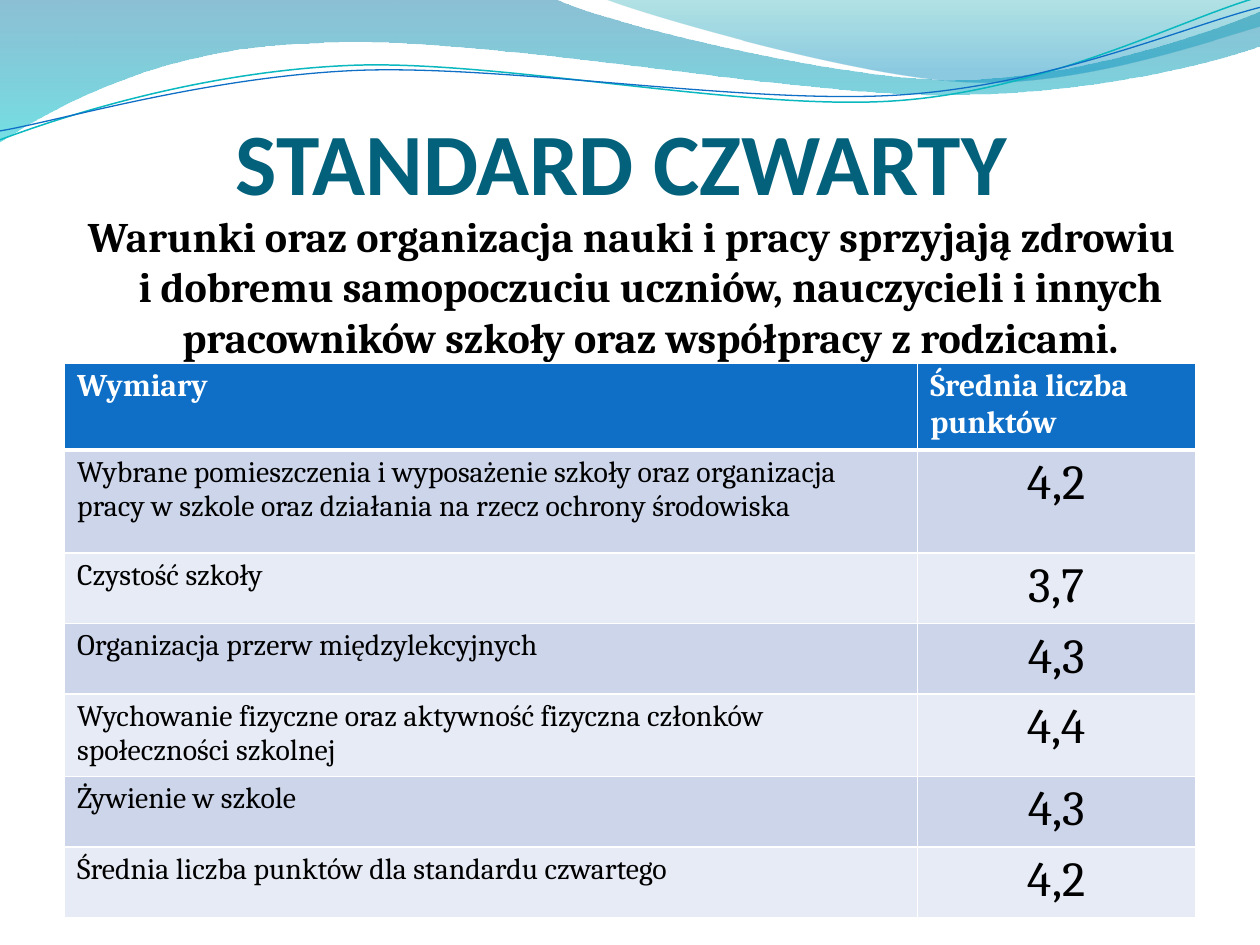
from dataclasses import dataclass

from lxml.etree import SubElement
from pptx import Presentation
from pptx.dml.color import RGBColor
from pptx.enum.text import MSO_ANCHOR as Anchor, MSO_AUTO_SIZE as AutoSize, PP_ALIGN as Align
from pptx.oxml.ns import qn
from pptx.util import Cm, Pt


@dataclass(frozen=True)
class Theme:
    heading_font: str = "Calibri"
    text_font: str = "Cambria"
    heading: str = "04617B"
    text: str = "000000"
    light: str = "FFFFFF"
    accent: str = "0F6FC6"
    teal: str = "0AB8BF"
    bands: tuple = ("CCD5EA", "E7EBF5")
    heading_size: float = 50
    lead_size: float = 24
    header_size: float = 18
    label_size: float = 17
    score_size: float = 28


THEME = Theme()

TITLE = "STANDARD CZWARTY"
LEAD = ("Warunki oraz organizacja nauki i pracy sprzyjają zdrowiu i dobremu samopoczuciu "
        "uczniów, nauczycieli i innych pracowników szkoły oraz współpracy z rodzicami.")
ROWS = [
    ("Wymiary", "Średnia liczba punktów"),
    ("Wybrane pomieszczenia i wyposażenie szkoły oraz organizacja pracy w szkole "
     "oraz działania na rzecz ochrony środowiska", "4,2"),
    ("Czystość szkoły", "3,7"),
    ("Organizacja przerw międzylekcyjnych", "4,3"),
    ("Wychowanie fizyczne oraz aktywność fizyczna członków społeczności szkolnej", "4,4"),
    ("Żywienie w szkole", "4,3"),
    ("Średnia liczba punktów dla standardu czwartego", "4,2"),
]
COLUMN_WIDTHS = (17.2, 5.6)
ROW_HEIGHTS = (1.75, 2.08, 1.42, 1.42, 1.63, 1.42, 1.42)
CELL_MARGIN = 0.11

# Outlines in cm: a pair is a straight step, six numbers are a Bézier curve.
# Each wave has its gradient stops: position, colour, opacity in percent.
WAVES = [
    ([(0, 0), (11.18, -0.03), (12.09, 0.43, 16.87, 1.6, 19.25, 1.6),
      (21.67, 1.6, 24.33, 0.66, 25.4, 0.23), (25.43, 0.91),
      (24.97, 1.12, 22.1, 1.93, 18.95, 1.91), (15.8, 1.91, 9.7, 0.71, 6.53, 0.86),
      (3.28, 0.91, 1.17, 2.11, -0.03, 2.87), (0, 0)],
     [(0, "0074A1", 45), (1, "00C6CF", 55)]),
    ([(12.17, -0.03), (12.93, 0.28, 17.32, 1.57, 19.53, 1.65),
      (21.74, 1.75, 24.41, 0.81, 25.4, 0.53), (25.4, 0), (12.17, -0.03)],
     [(0, "00A1A9", 30), (0.8, "008BBF", 45)]),
]
STRANDS = [
    ([(0, 2.82), (1.22, 2.36, 4.01, 1.45, 7.04, 1.32),
      (10.03, 1.19, 15.06, 2.26, 18.11, 2.03), (21.16, 1.8, 23.83, 0.38, 25.35, -0.05)],
     THEME.teal, 0.85),
    ([(0, 2.64), (1.19, 2.44, 4.17, 1.55, 7.19, 1.42),
      (10.24, 1.3, 15.16, 2.13, 18.21, 1.91), (21.23, 1.7, 23.9, 0.53, 25.4, 0.15)],
     THEME.accent, 0.75),
]


def rgb(value):
    return RGBColor.from_string(value)


def add_span(para, text, font, size, color, bold=False):
    span = para.add_run()
    span.text = text
    span.font.name, span.font.size, span.font.bold = font, Pt(size), bold
    span.font.color.rgb = rgb(color)


def add_outline(page, box, outline, close):
    left, top = box[:2]
    points = [(Cm(left + part[i]), Cm(top + part[i + 1]))
              for part in outline for i in range(0, len(part), 2)]
    builder = page.shapes.build_freeform(*points[0])
    builder.add_line_segments(points[1:], close=close)
    shape = builder.convert_to_shape()
    shape.shadow.inherit = False
    # Join each three steps of a curve into one Bézier segment
    steps = iter(list(shape.element.iter(qn("a:lnTo"))))
    for part in outline[1:]:
        group = [next(steps) for _ in range(len(part) // 2)]
        if len(group) == 3:
            group[0].tag = qn("a:cubicBezTo")
            for step in group[1:]:
                group[0].append(step[0])
                step.getparent().remove(step)
    return shape


def add_waves(page, box):
    # Translucent bands
    for outline, stops in WAVES:
        wave = add_outline(page, box, outline, close=True)
        wave.line.fill.background()
        wave.fill.gradient()
        wave.fill.gradient_angle = 270
        elements = wave.element.iter(qn("a:gs"))
        for stop, element, (position, color, opacity) in zip(
                wave.fill.gradient_stops, elements, stops):
            stop.position = position
            stop.color.rgb = rgb(color)
            SubElement(element[0], qn("a:alpha"), val=str(opacity * 1000))
    # Thin strands
    for outline, color, width in STRANDS:
        strand = add_outline(page, box, outline, close=False)
        strand.fill.background()
        strand.line.color.rgb = rgb(color)
        strand.line.width = Pt(width)


def add_title(page, box):
    title = page.shapes.title
    title.left, title.top, title.width, title.height = map(Cm, box)
    frame = title.text_frame
    frame.auto_size, frame.vertical_anchor = AutoSize.NONE, Anchor.BOTTOM
    frame.margin_left = frame.margin_right = frame.margin_bottom = 0
    para = frame.paragraphs[0]
    para.alignment = Align.CENTER
    add_span(para, TITLE, THEME.heading_font, THEME.heading_size, THEME.heading, True)


def add_lead(page, box):
    frame = page.shapes.add_textbox(*map(Cm, box)).text_frame
    frame.word_wrap = True
    para = frame.paragraphs[0]
    para.alignment = Align.CENTER
    hanging = Cm(0.76)
    properties = para._p.get_or_add_pPr()
    properties.set("marL", str(hanging))
    properties.set("indent", str(-hanging))
    add_span(para, LEAD, THEME.text_font, THEME.lead_size, THEME.text, True)


def set_borders(cell, top, bottom):
    properties = cell._tc.get_or_add_tcPr()
    for side, width in zip("LRTB", (1, 1, top, bottom)):
        line = SubElement(properties, qn(f"a:ln{side}"), w=str(Pt(width)))
        SubElement(SubElement(line, qn("a:solidFill")), qn("a:srgbClr"), val=THEME.light)


def add_scores(page, box):
    frame = page.shapes.add_table(len(ROWS), len(COLUMN_WIDTHS), *map(Cm, box))
    table = frame.table
    for column, width in zip(table.columns, COLUMN_WIDTHS):
        column.width = Cm(width)
    for row, height in zip(table.rows, ROW_HEIGHTS):
        row.height = Cm(height)
    for r, texts in enumerate(ROWS):
        header = r == 0
        for c, text in enumerate(texts):
            cell = table.cell(r, c)
            cell.margin_top = cell.margin_bottom = Cm(CELL_MARGIN)
            set_borders(cell, top=3 if r == 1 else 1, bottom=3 if header else 1)
            cell.fill.solid()
            cell.fill.fore_color.rgb = rgb(THEME.accent if header else THEME.bands[(r - 1) % 2])
            para = cell.text_frame.paragraphs[0]
            if header:
                size, color = THEME.header_size, THEME.light
            else:
                size, color = (THEME.label_size, THEME.score_size)[c], THEME.text
                para.alignment = (Align.LEFT, Align.CENTER)[c]
            add_span(para, text, THEME.text_font, size, color, header)


def main():
    deck = Presentation()
    deck.slide_width, deck.slide_height = Cm(25.4), Cm(19.05)
    page = deck.slides.add_slide(deck.slide_layouts[5])
    add_waves(page, (0, 0))
    add_title(page, (1.1, 1.12, 22.86, 3.18))
    add_lead(page, (1.3, 4.12, 22.86, 3.2))
    add_scores(page, (1.3, 7.32, sum(COLUMN_WIDTHS), sum(ROW_HEIGHTS)))
    deck.save("out.pptx")


if __name__ == "__main__":
    main()
